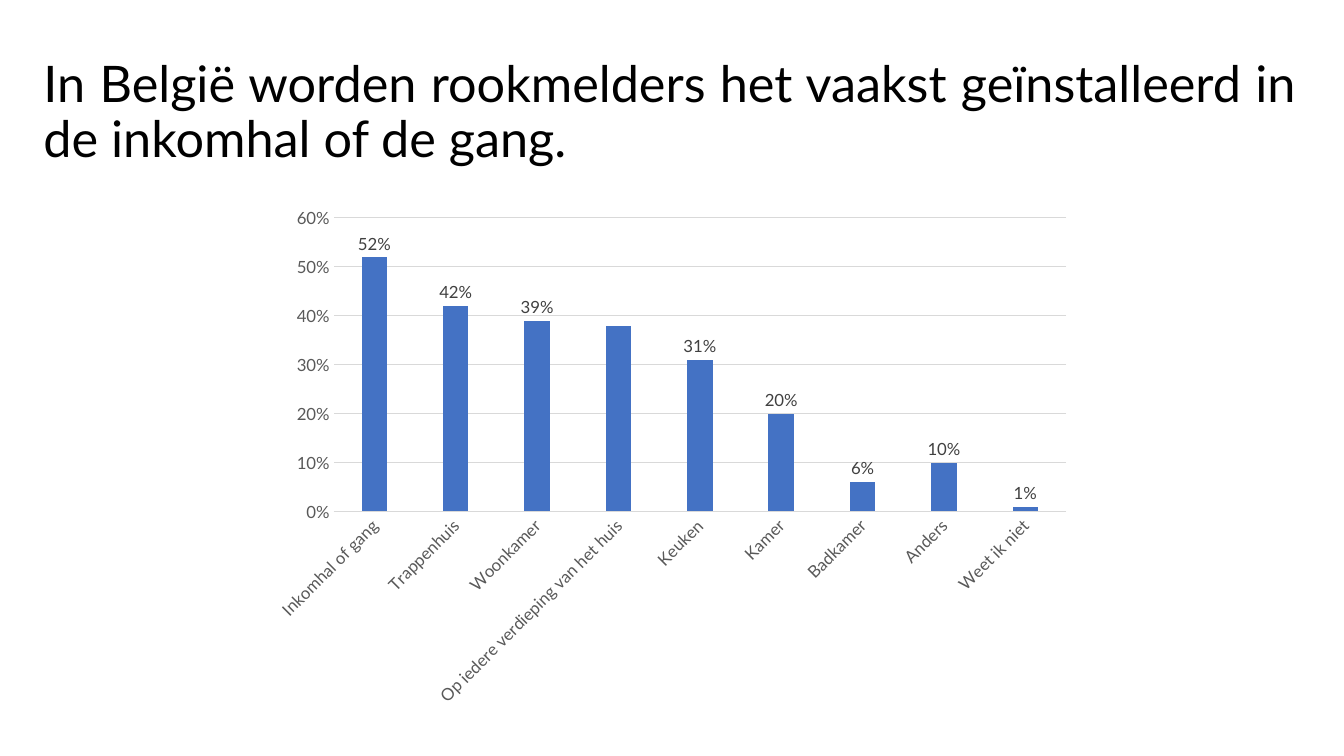
from dataclasses import dataclass

from lxml import etree
from pptx import Presentation
from pptx.chart.axis import CategoryAxis, ValueAxis
from pptx.chart.chart import Chart
from pptx.chart.data import CategoryChartData
from pptx.chart.series import BarSeries
from pptx.dml.color import RGBColor
from pptx.enum.chart import XL_CHART_TYPE, XL_LABEL_POSITION, XL_TICK_MARK
from pptx.enum.text import MSO_ANCHOR, MSO_AUTO_SIZE, PP_ALIGN
from pptx.oxml.ns import qn
from pptx.slide import Slide
from pptx.text.text import Font
from pptx.util import Cm, Pt

COLUMNS = XL_CHART_TYPE.COLUMN_CLUSTERED
OUTSIDE_END = XL_LABEL_POSITION.OUTSIDE_END
NO_TICKS = XL_TICK_MARK.NONE
MIDDLE = MSO_ANCHOR.MIDDLE
JUSTIFY = PP_ALIGN.JUSTIFY
NO_AUTOFIT = MSO_AUTO_SIZE.NONE

FONT_NAME = "Lato"
BLACK = "000000"
LABEL_GREY = "404040"
AXIS_GREY = "595959"
GRID_GREY = "D9D9D9"
BAR_BLUE = "4472C4"

TITLE = (
    "In België worden rookmelders het vaakst geïnstalleerd "
    "in de inkomhal of de gang."
)


@dataclass(frozen=True)
class Location:
    name: str
    share: float
    labelled: bool = True


LOCATIONS = [
    Location("Inkomhal of gang", 0.52),
    Location("Trappenhuis", 0.42),
    Location("Woonkamer", 0.39),
    Location("Op iedere verdieping van het huis", 0.38, labelled=False),
    Location("Keuken", 0.31),
    Location("Kamer", 0.2),
    Location("Badkamer", 0.06),
    Location("Anders", 0.1),
    Location("Weet ik niet", 0.01),
]


def color(hex_value: str) -> RGBColor:
    return RGBColor.from_string(hex_value)


def style_font(font: Font, size: float, hex_value: str) -> None:
    font.name = FONT_NAME
    font.size = Pt(size)
    font.color.rgb = color(hex_value)


def add_title(slide: Slide) -> None:
    title = slide.shapes.title
    title.left, title.top = Cm(0.84), Cm(1.02)
    title.width, title.height = Cm(32.08), Cm(3.68)
    frame = title.text_frame
    frame.text = TITLE
    frame.word_wrap = True
    frame.auto_size = NO_AUTOFIT
    frame.vertical_anchor = MIDDLE
    paragraph = frame.paragraphs[0]
    paragraph.alignment = JUSTIFY
    paragraph.line_spacing = 0.9
    style_font(paragraph.font, 36, BLACK)


def style_category_axis(axis: CategoryAxis) -> None:
    axis.major_tick_mark = axis.minor_tick_mark = NO_TICKS
    axis.format.line.color.rgb = color(GRID_GREY)
    axis.format.line.width = Pt(0.75)
    style_font(axis.tick_labels.font, 12, AXIS_GREY)
    body = axis._element.find(qn("c:txPr")).find(qn("a:bodyPr"))
    body.set("rot", str(-45 * 60000))
    body.set("vert", "horz")


def style_value_axis(axis: ValueAxis) -> None:
    axis.major_tick_mark = axis.minor_tick_mark = NO_TICKS
    axis.minimum_scale, axis.maximum_scale, axis.major_unit = 0, 0.6, 0.1
    axis.format.line.fill.background()
    axis.has_major_gridlines = True
    gridline = axis.major_gridlines.format.line
    gridline.color.rgb = color(GRID_GREY)
    gridline.width = Pt(0.75)
    axis.tick_labels.number_format = "0%"
    axis.tick_labels.number_format_is_linked = False
    style_font(axis.tick_labels.font, 12, AXIS_GREY)


def add_value_labels(series: BarSeries) -> None:
    """Show the value above every bar whose location is labelled."""
    labels = series.data_labels
    labels.show_value = True
    labels.position = OUTSIDE_END
    labels.number_format = "0%"
    labels.number_format_is_linked = False
    style_font(labels.font, 12, LABEL_GREY)
    hidden = [i for i, location in enumerate(LOCATIONS) if not location.labelled]
    for position, index in enumerate(hidden):
        label = etree.Element(qn("c:dLbl"))
        etree.SubElement(label, qn("c:idx")).set("val", str(index))
        etree.SubElement(label, qn("c:delete")).set("val", "1")
        labels._element.insert(position, label)


def add_location_chart(slide: Slide) -> None:
    data = CategoryChartData(number_format="0%")
    data.categories = [location.name for location in LOCATIONS]
    data.add_series("Series 1", [location.share for location in LOCATIONS])
    frame = slide.shapes.add_chart(
        COLUMNS, Cm(6.58), Cm(4.98), Cm(20.7), Cm(13.06), data
    )
    chart: Chart = frame.chart
    chart.has_title = False
    chart.has_legend = False
    style_font(chart.font, 10, BLACK)
    style_category_axis(chart.category_axis)
    style_value_axis(chart.value_axis)

    plot = chart.plots[0]
    plot.vary_by_categories = False
    plot.gap_width = 219
    plot.overlap = -27
    series = plot.series[0]
    series.format.fill.solid()
    series.format.fill.fore_color.rgb = color(BAR_BLUE)
    add_value_labels(series)


def main() -> None:
    presentation = Presentation()
    presentation.slide_width = Cm(33.87)
    presentation.slide_height = Cm(19.05)
    title_only = presentation.slide_layouts.get_by_name("Title Only")
    slide = presentation.slides.add_slide(title_only)
    add_title(slide)
    add_location_chart(slide)
    presentation.save("out.pptx")


if __name__ == "__main__":
    main()
